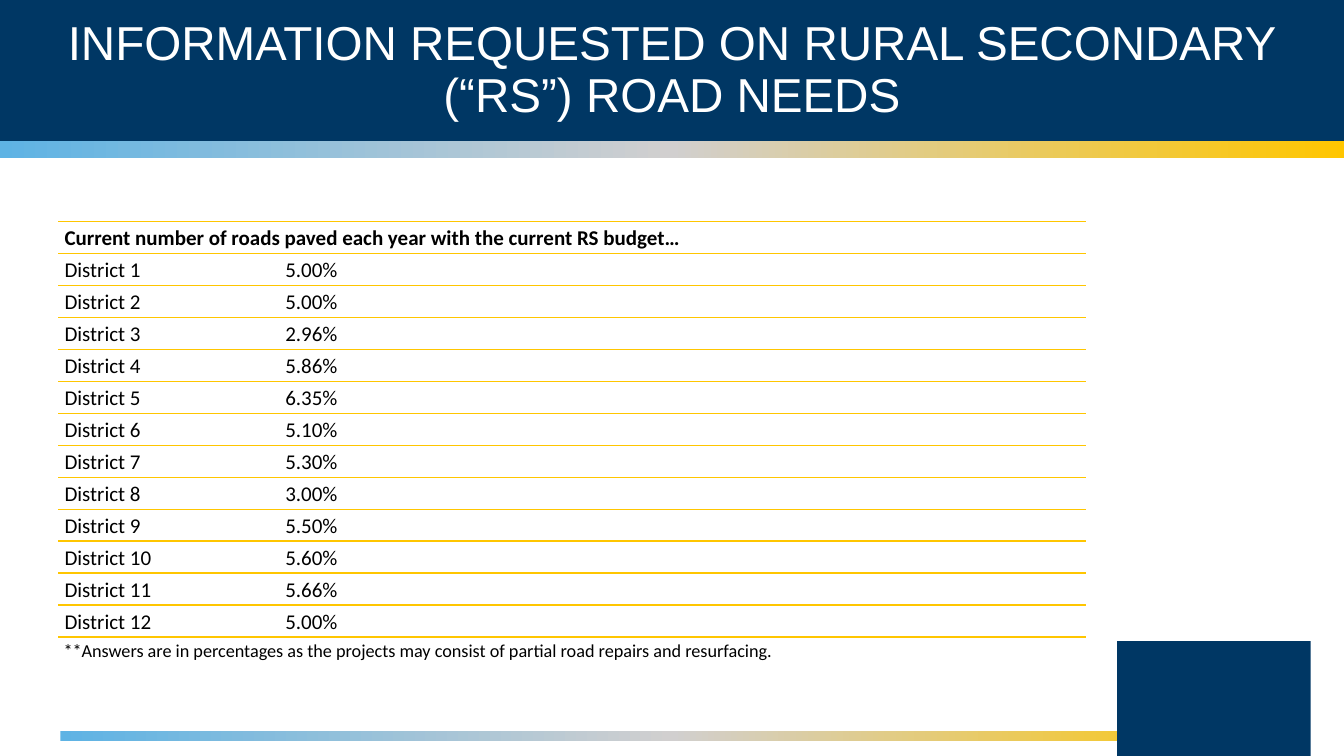
from copy import deepcopy
from dataclasses import dataclass

from lxml import etree
from pptx import Presentation
from pptx.dml.color import RGBColor
from pptx.enum import shapes, text
from pptx.oxml import ns
from pptx.util import Inches, Pt

COLORS = {
    "navy": "003764",
    "sky": "5EB3E4",
    "grey": "D1CFCF",
    "gold": "FFC600",
    "white": "FFFFFF",
    "black": "000000",
}
GRADIENT = ("sky", "grey", "gold")

ROW_LEFT, ROW_TOP, ROW_WIDTH = 0.58, 2.2, 10.19
LAST_RULE = 6.32
VALUE_TAB = 2.19


@dataclass
class Bar:
    left: float
    top: float
    width: float
    height: float
    color: str = ""  # an empty color means the gradient


@dataclass
class Label:
    words: str
    left: float
    top: float
    width: float
    height: float
    size: float
    font: str = "Calibri"
    color: str = "black"
    bold: bool = False
    inset: float = 0.06
    centered: bool = False
    tab: float = 0


BARS = [
    Bar(0, 0, 13.33, 1.4, "navy"),
    Bar(0, 1.4, 13.33, 0.17),
    Bar(0.6, 7.25, 12.14, 0.1),
    Bar(11.08, 6.36, 1.92, 1.18, "navy"),
]
TITLE = Label("INFORMATION REQUESTED ON RURAL SECONDARY (“RS”) ROAD NEEDS",
              0, 0, 13.33, 1.41, 34, "Arial", "white", inset=0.1, centered=True)
HEADING = "Current number of roads paved each year with the current RS budget…"
NOTE = ("**Answers are in percentages as the projects may consist of "
        "partial road repairs and resurfacing.")
PERCENTAGES = [5.00, 5.00, 2.96, 5.86, 6.35, 5.10,
               5.30, 3.00, 5.50, 5.60, 5.66, 5.00]


def rgb(name: str) -> RGBColor:
    return RGBColor.from_string(COLORS[name])


def draw_bar(page, bar: Bar) -> None:
    shape = page.shapes.add_shape(
        shapes.MSO_SHAPE.RECTANGLE, Inches(bar.left), Inches(bar.top),
        Inches(bar.width), Inches(bar.height))
    shape.shadow.inherit = False
    shape.line.fill.background()
    if bar.color:
        shape.fill.solid()
        shape.fill.fore_color.rgb = rgb(bar.color)
        return
    shape.fill.gradient()
    shape.fill.gradient_angle = 0
    stop_list = shape._element.spPr.find(".//" + ns.qn("a:gsLst"))
    stop_list.append(deepcopy(stop_list[0]))
    for index, (stop, name) in enumerate(zip(shape.fill.gradient_stops, GRADIENT)):
        stop.position = index / 2
        stop.color.rgb = rgb(name)


def draw_label(page, label: Label) -> None:
    box = page.shapes.add_textbox(Inches(label.left), Inches(label.top),
                                  Inches(label.width), Inches(label.height))
    frame = box.text_frame
    frame.word_wrap = True
    frame.margin_left = frame.margin_right = Inches(label.inset)
    frame.margin_top = frame.margin_bottom = Inches(label.inset)
    para = frame.paragraphs[0]
    para.text = label.words
    para.line_spacing = 0.9
    if label.centered:
        frame.vertical_anchor = text.MSO_ANCHOR.MIDDLE
        para.alignment = text.PP_ALIGN.CENTER
    if label.tab:
        tabs = etree.SubElement(para._p.get_or_add_pPr(), ns.qn("a:tabLst"))
        etree.SubElement(tabs, ns.qn("a:tab"), pos=str(Inches(label.tab)), algn="l")
    para.font.name = label.font
    para.font.size = Pt(label.size)
    para.font.bold = label.bold
    para.font.color.rgb = rgb(label.color)


def draw_rule(page, top: float) -> None:
    rule = page.shapes.add_connector(
        shapes.MSO_CONNECTOR.STRAIGHT, Inches(ROW_LEFT), Inches(top),
        Inches(ROW_LEFT + ROW_WIDTH), Inches(top))
    rule.line.color.rgb = rgb("gold")
    rule.line.width = Pt(1)
    etree.SubElement(rule._element.spPr, ns.qn("a:effectLst"))


def main() -> None:
    deck = Presentation()
    deck.slide_width, deck.slide_height = Inches(13.33), Inches(7.5)
    page = deck.slides.add_slide(deck.slide_layouts[6])

    # Bands and title
    for bar in BARS:
        draw_bar(page, bar)
    draw_label(page, TITLE)

    # Ruled list: heading, one row per district, closing note
    districts = [f"District {number}\t{value:.2f}%"
                 for number, value in enumerate(PERCENTAGES, 1)]
    rows = [HEADING, *districts, NOTE]
    pitch = (LAST_RULE - ROW_TOP) / (len(rows) - 1)
    for index, words in enumerate(rows):
        top = ROW_TOP + index * pitch
        is_note = words == NOTE
        draw_rule(page, top)
        draw_label(page, Label(
            words, ROW_LEFT, top, ROW_WIDTH, 0.32,
            size=13 if is_note else 15, bold=words == HEADING,
            inset=0.05 if is_note else 0.06,
            tab=VALUE_TAB if words in districts else 0))

    deck.save("out.pptx")


if __name__ == "__main__":
    main()
